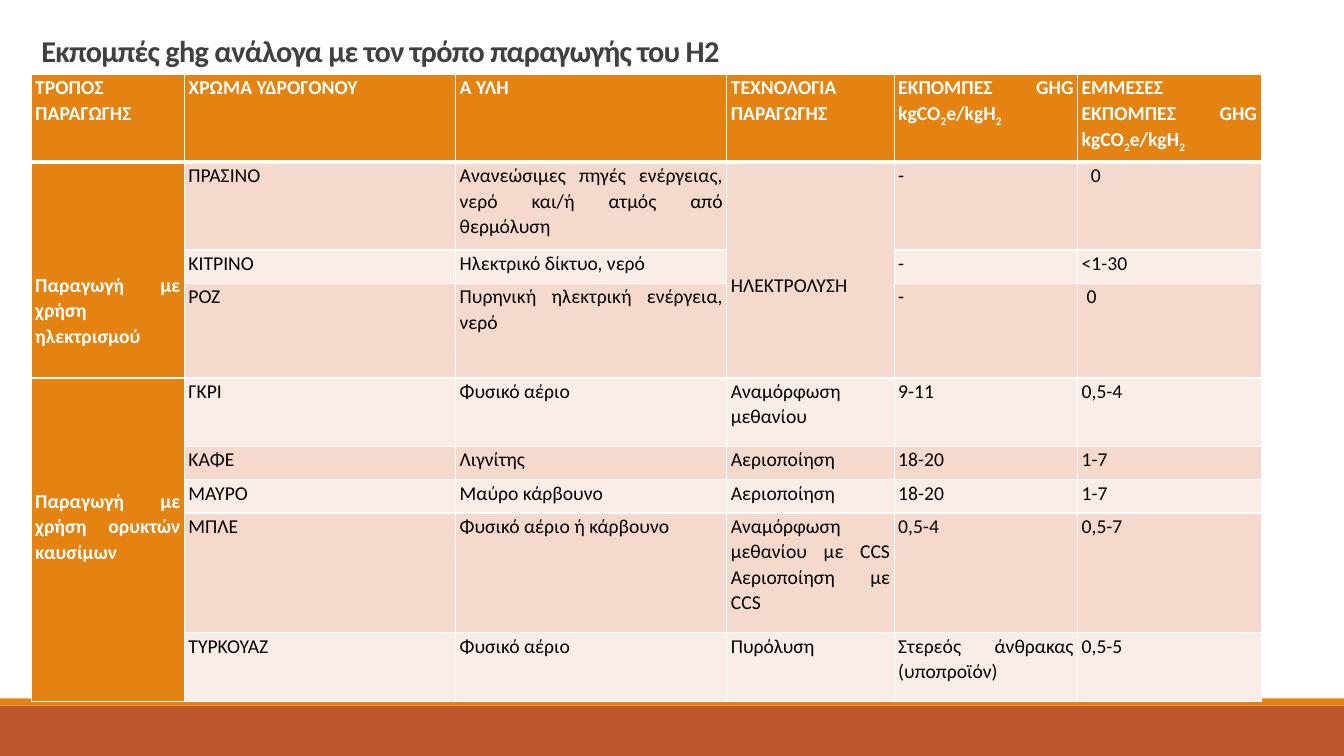
from dataclasses import dataclass

from pptx import Presentation
from pptx.dml.color import RGBColor
from pptx.enum.shapes import MSO_SHAPE
from pptx.enum.text import MSO_ANCHOR, MSO_AUTO_SIZE, PP_ALIGN
from pptx.oxml import parse_xml
from pptx.oxml.ns import nsdecls
from pptx.util import Inches, Pt

RECT = MSO_SHAPE.RECTANGLE
BOTTOM = MSO_ANCHOR.BOTTOM
FIXED = MSO_AUTO_SIZE.NONE
LEFT = PP_ALIGN.LEFT
JUSTIFY = PP_ALIGN.JUSTIFY


@dataclass(frozen=True)
class Theme:
    font: str = "Calibri"
    title: float = 21.6
    body: float = 14
    dark: str = "404040"
    black: str = "000000"
    white: str = "FFFFFF"
    orange: str = "E48312"
    rust: str = "BD582C"
    bands: tuple = ("FAEDE7", "F5D9CC")


COLS = (1.52, 2.69, 2.69, 1.66, 1.82, 1.82)
ROWS = (0.87, 0.87, 0.33, 0.94, 0.68, 0.33, 0.33, 1.19, 0.68)
CELLS = (
    ("ΤΡΟΠΟΣ ΠΑΡΑΓΩΓΗΣ", "ΧΡΩΜΑ ΥΔΡΟΓΟΝΟΥ", "Ά ΥΛΗ", "ΤΕΧΝΟΛΟΓΙΑ ΠΑΡΑΓΩΓΗΣ",
     "ΕΚΠΟΜΠΕΣ GHG kgCO|2|e/kgH|2", "ΕΜΜΕΣΕΣ ΕΚΠΟΜΠΕΣ GHG kgCO|2|e/kgH|2"),
    ("Παραγωγή με χρήση ηλεκτρισμού", "ΠΡΑΣΙΝΟ",
     "Ανανεώσιμες πηγές ενέργειας, νερό και/ή ατμός από θερμόλυση",
     "ΗΛΕΚΤΡΟΛΥΣΗ", "-", "0"),
    ("", "ΚΙΤΡΙΝΟ", "Ηλεκτρικό δίκτυο, νερό", "", "-", "<1-30"),
    ("", "ΡΟΖ", "Πυρηνική ηλεκτρική ενέργεια, νερό", "", "-", "0"),
    ("Παραγωγή με χρήση ορυκτών καυσίμων", "ΓΚΡΙ", "Φυσικό αέριο",
     "Αναμόρφωση μεθανίου", "9-11", "0,5-4"),
    ("", "ΚΑΦΕ", "Λιγνίτης", "Αεριοποίηση", "18-20", "1-7"),
    ("", "ΜΑΥΡΟ", "Μαύρο κάρβουνο", "Αεριοποίηση", "18-20", "1-7"),
    ("", "ΜΠΛΕ", "Φυσικό αέριο ή κάρβουνο",
     "Αναμόρφωση μεθανίου με CCS Αεριοποίηση με CCS", "0,5-4", "0,5-7"),
    ("", "ΤΥΡΚΟΥΑΖ", "Φυσικό αέριο", "Πυρόλυση",
     "Στερεός άνθρακας (υποπροϊόν)", "0,5-5"),
)
SPANS = {(1, 0): 3, (1, 3): 3, (4, 0): 5}
LEADS = {(1, 5): 0.09, (3, 5): 0.05}
DROP = 1.09


class Deck:
    def __init__(self, theme):
        self.theme = theme
        self.file = Presentation()
        self.file.slide_width = Inches(13.33)
        self.file.slide_height = Inches(7.5)
        self.slide = self.file.slides.add_slide(self.file.slide_layouts[5])

    def style(self, par, size, color, bold):
        font = par.font
        font.name = self.theme.font
        font.size = Pt(size)
        font.bold = bold
        font.color.rgb = RGBColor.from_string(color)

    def title(self, text, left, top, width, height):
        shape = self.slide.shapes.title
        shape.left, shape.top = Inches(left), Inches(top)
        shape.width, shape.height = Inches(width), Inches(height)
        frame = shape.text_frame
        frame.auto_size = FIXED
        frame.word_wrap = True
        frame.vertical_anchor = BOTTOM
        par = frame.paragraphs[0]
        par.alignment = LEFT
        par.line_spacing = 0.85
        self.style(par, self.theme.title, self.theme.dark, True)
        run = par.add_run()
        run.text = text
        run._r.get_or_add_rPr().set("spc", "-50")

    def bar(self, top, height, color):
        shape = self.slide.shapes.add_shape(
            RECT, 0, Inches(top), self.file.slide_width, Inches(height))
        shape.shadow.inherit = False
        shape.fill.solid()
        shape.fill.fore_color.rgb = RGBColor.from_string(color)
        shape.line.fill.background()

    def edge(self, cell, row):
        props = cell._tc.get_or_add_tcPr()
        for side in "LRTB":
            thick = (row, side) in ((0, "B"), (1, "T"))
            width = Pt(3 if thick else 1)
            props.append(parse_xml(
                f'<a:ln{side} {nsdecls("a")} w="{width}"><a:solidFill>'
                f'<a:srgbClr val="{self.theme.white}"/></a:solidFill></a:ln{side}>'))

    def label(self, cell, text, head):
        par = cell.text_frame.paragraphs[0]
        par.alignment = JUSTIFY
        par.line_spacing = 1.07
        par.space_after = Pt(8)
        color = self.theme.white if head else self.theme.black
        self.style(par, self.theme.body, color, head)
        for index, part in enumerate(text.split("|")):
            run = par.add_run()
            run.text = part
            if index % 2:
                run._r.get_or_add_rPr().set("baseline", "-25000")

    def table(self, left, top):
        grid = self.slide.shapes.add_table(
            len(ROWS), len(COLS), Inches(left), Inches(top),
            Inches(sum(COLS)), Inches(sum(ROWS))).table
        for col, width in zip(grid.columns, COLS):
            col.width = Inches(width)
        for row, height in zip(grid.rows, ROWS):
            row.height = Inches(height)
        for (row, col), count in SPANS.items():
            grid.cell(row, col).merge(grid.cell(row + count - 1, col))
        for row, texts in enumerate(CELLS):
            for col, text in enumerate(texts):
                cell = grid.cell(row, col)
                spot = (row, col)
                head = row == 0 or col == 0
                cell.margin_left = Inches(0.04 + LEADS.get(spot, 0))
                cell.margin_right = Inches(0.04)
                cell.margin_top = Inches(DROP if spot in SPANS else 0)
                cell.margin_bottom = 0
                self.edge(cell, row)
                fill = self.theme.orange if head else self.theme.bands[row % 2]
                cell.fill.solid()
                cell.fill.fore_color.rgb = RGBColor.from_string(fill)
                self.label(cell, text, head)


def main():
    theme = Theme()
    deck = Deck(theme)
    deck.bar(7, 0.5, theme.rust)
    deck.bar(6.93, 0.07, theme.orange)
    deck.title("Εκπομπές ghg ανάλογα με τον τρόπο παραγωγής του H2",
               0.31, 0.31, 13.02, 0.42)
    deck.table(0.31, 0.74)
    deck.file.save("out.pptx")


if __name__ == "__main__":
    main()
